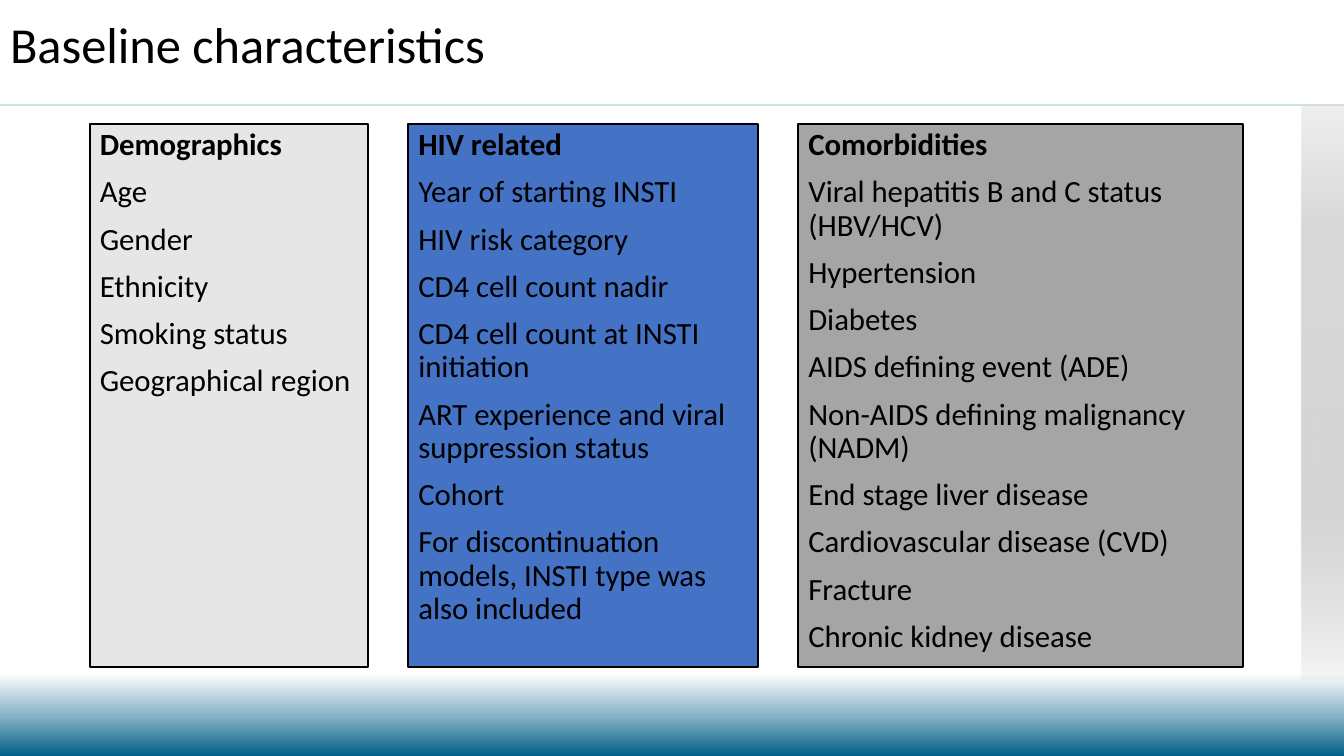
import pptx
import pptx.dml.color
import pptx.enum.shapes
import pptx.enum.text
import pptx.oxml.ns
import pptx.util
from lxml import etree

Pt = pptx.util.Pt
RGBColor = pptx.dml.color.RGBColor
qn = pptx.oxml.ns.qn
Anchor = pptx.enum.text.MSO_ANCHOR

BLACK = RGBColor(0x00, 0x00, 0x00)
TEAL = RGBColor(0x00, 0x5F, 0x86)
PALE_GREY = RGBColor(0xE7, 0xE6, 0xE6)
BLUE = RGBColor(0x44, 0x72, 0xC4)
MID_GREY = RGBColor(0xA5, 0xA5, 0xA5)
FONT = "Calibri"

# Content
TITLE = "Baseline characteristics"
# Width, fill, heading, items
CARDS = [
    (198.7, PALE_GREY, "Demographics",
     ["Age", "Gender", "Ethnicity", "Smoking status", "Geographical region"]),
    (249.8, BLUE, "HIV related",
     ["Year of starting INSTI", "HIV risk category", "CD4 cell count nadir",
      "CD4 cell count at INSTI initiation",
      "ART experience and viral suppression status", "Cohort",
      "For discontinuation models, INSTI type was also included"]),
    (317.5, MID_GREY, "Comorbidities",
     ["Viral hepatitis B and C status (HBV/HCV)", "Hypertension", "Diabetes",
      "AIDS defining event (ADE)", "Non-AIDS defining malignancy (NADM)",
      "End stage liver disease", "Cardiovascular disease (CVD)", "Fracture",
      "Chronic kidney disease"]),
]
# Position %, colour, opacity %
PAGE_STOPS = [(89, RGBColor(0xFF, 0xFF, 0xFF), 100),
              (95, RGBColor(0x80, 0xAF, 0xC3), 100), (100, TEAL, 100)]
STRIP_STOPS = [(0, RGBColor(0xD9, 0xD9, 0xD9), 40),
               (21, RGBColor(0xD9, 0xD9, 0xD9), 100),
               (70, RGBColor(0xD5, 0xD5, 0xD5), 100),
               (100, RGBColor(0xBF, 0xBF, 0xBF), 13)]

# Layout in points
PAGE_WIDTH, PAGE_HEIGHT = 960, 540
RULE_Y = 75
CARD_LEFT, CARD_TOP, CARD_HEIGHT, CARD_GAP = 64.1, 88.5, 388.2, 28.8
STRIP_WIDTH, STRIP_HEIGHT = 30, 409.7


def set_opacity(color, percent):
    etree.SubElement(color, qn("a:alpha"), val=str(percent * 1000))


def fill_downward(fill, owner, stops):
    fill.gradient()
    fill.gradient_angle = 270
    stop_list = owner.find(".//" + qn("a:gsLst"))
    for old_stop in list(stop_list):
        stop_list.remove(old_stop)
    for position, rgb, opacity in stops:
        stop = etree.SubElement(stop_list, qn("a:gs"), pos=str(position * 1000))
        color = etree.SubElement(stop, qn("a:srgbClr"), val=str(rgb))
        if opacity < 100:
            set_opacity(color, opacity)


def place(shape, left, top, width, height):
    shape.left, shape.top = Pt(left), Pt(top)
    shape.width, shape.height = Pt(width), Pt(height)


def prepare_frame(shape, anchor):
    frame = shape.text_frame
    frame.word_wrap = True
    frame.auto_size = pptx.enum.text.MSO_AUTO_SIZE.NONE
    frame.vertical_anchor = anchor
    return frame


def write(para, text, size, bold=False, space_before=0):
    properties = para._p.get_or_add_pPr()
    properties.set("marL", "0")
    properties.set("indent", "0")
    etree.SubElement(properties, qn("a:buNone"))
    para.alignment = pptx.enum.text.PP_ALIGN.LEFT
    para.line_spacing = 0.9
    para.space_before = Pt(space_before)
    para.space_after = Pt(0)
    span = para.add_run()
    span.text = text
    span.font.name = FONT
    span.font.size = Pt(size)
    span.font.bold = bold
    span.font.color.rgb = BLACK


def main():
    deck = pptx.Presentation()
    deck.slide_width, deck.slide_height = Pt(PAGE_WIDTH), Pt(PAGE_HEIGHT)
    page = deck.slides.add_slide(deck.slide_layouts[4])

    # Background, rule and side strip
    fill_downward(page.background.fill, page._element, PAGE_STOPS)
    rule = page.shapes.add_connector(
        pptx.enum.shapes.MSO_CONNECTOR.STRAIGHT,
        Pt(0), Pt(RULE_Y), Pt(PAGE_WIDTH), Pt(RULE_Y))
    rule.line.color.rgb = TEAL
    rule.line.width = Pt(1)
    set_opacity(rule._element.spPr.find(".//" + qn("a:srgbClr")), 30)
    etree.SubElement(rule._element.spPr, qn("a:effectLst"))
    strip = page.shapes.add_shape(
        pptx.enum.shapes.MSO_SHAPE.RECTANGLE,
        Pt(PAGE_WIDTH - STRIP_WIDTH), Pt(RULE_Y + 0.6),
        Pt(STRIP_WIDTH), Pt(STRIP_HEIGHT))
    fill_downward(strip.fill, strip._element.spPr, STRIP_STOPS)
    strip.line.fill.background()
    strip.shadow.inherit = False

    # Title
    title = page.shapes.title
    place(title, 0, 0, 828, 67)
    write(prepare_frame(title, Anchor.MIDDLE).paragraphs[0], TITLE, 36)

    # Cards
    bodies = list(page.placeholders)[1:]
    left = CARD_LEFT
    for body, (width, color, heading, items) in zip(bodies, CARDS):
        place(body, left, CARD_TOP, width, CARD_HEIGHT)
        body.fill.solid()
        body.fill.fore_color.rgb = color
        body.line.color.rgb = BLACK
        body.line.width = Pt(1.5)
        frame = prepare_frame(body, Anchor.TOP)
        write(frame.paragraphs[0], heading, 22, bold=True)
        for item in items:
            write(frame.add_paragraph(), item, 22, space_before=10)
        left += width + CARD_GAP

    # Unused placeholders
    for spare in bodies[len(CARDS):]:
        spare._element.getparent().remove(spare._element)

    deck.save("out.pptx")


if __name__ == "__main__":
    main()
